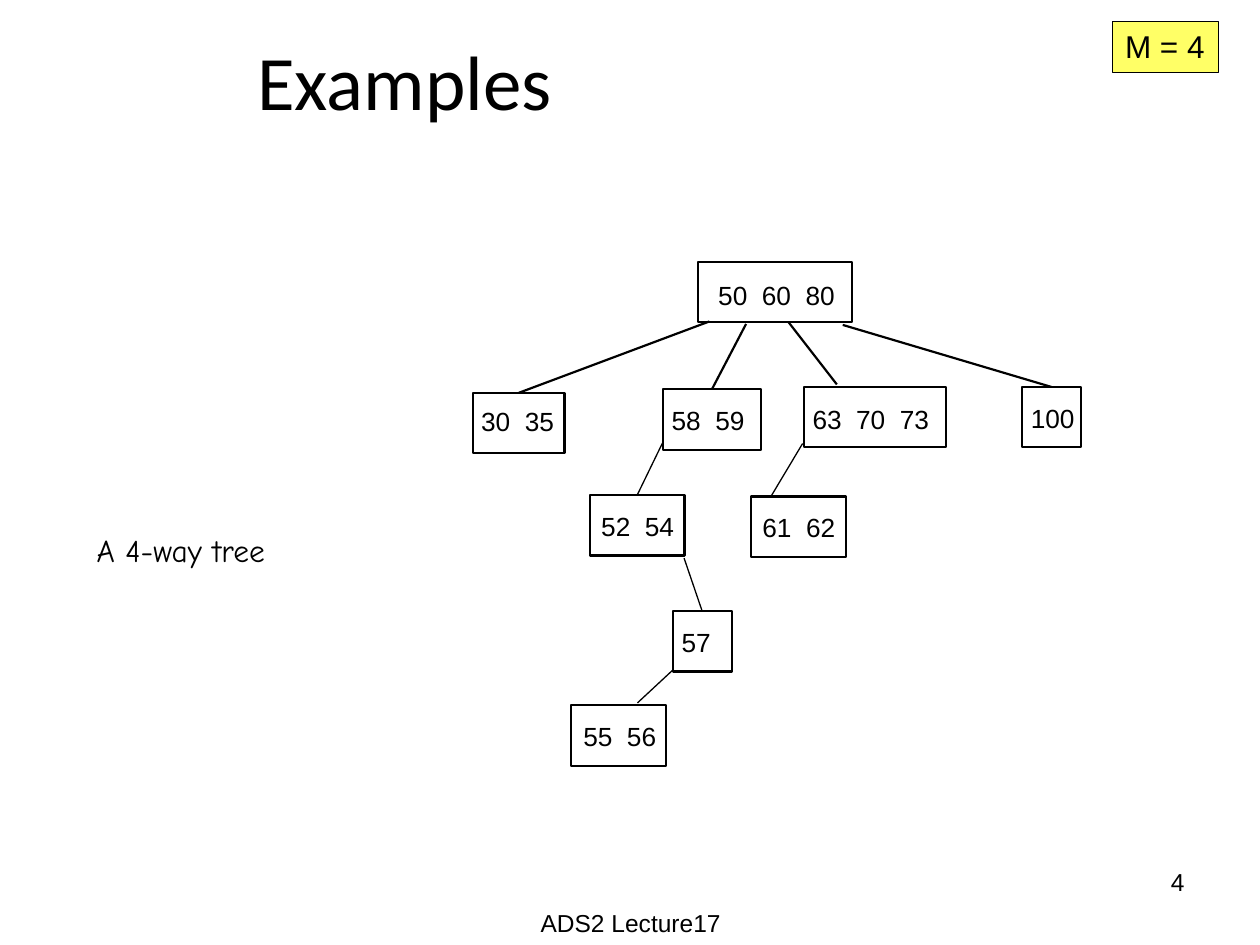
import pptx
import pptx.util
import pptx.dml.color
import pptx.enum.shapes
import pptx.enum.text
import pptx.oxml.ns
from lxml import etree

Cm = pptx.util.Cm
Pt = pptx.util.Pt
qn = pptx.oxml.ns.qn
RGB = pptx.dml.color.RGBColor.from_string
ALIGN = pptx.enum.text.PP_ALIGN
RECT = pptx.enum.shapes.MSO_SHAPE.RECTANGLE
STRAIGHT = pptx.enum.shapes.MSO_CONNECTOR.STRAIGHT
COLORS = {"ink": "000000", "node": "FFFFFF", "badge": "FFFF66"}
KEY_STEP = 0.88


def write(sp, text, font="Arial", size=14, align=ALIGN.LEFT, wrap=True,
          anchor=pptx.enum.text.MSO_ANCHOR.TOP, margin=None, tabs=0):
    tf = sp.text_frame
    tf.word_wrap = wrap
    tf.vertical_anchor = anchor
    if margin is not None:
        tf.margin_left = tf.margin_right = tf.margin_top = tf.margin_bottom = Cm(margin)
    p = tf.paragraphs[0]
    p.alignment = align
    if tabs:
        tab_list = etree.SubElement(p._p.get_or_add_pPr(), qn("a:tabLst"))
        for i in range(1, tabs + 1):
            etree.SubElement(tab_list, qn("a:tab"), pos=str(Cm(KEY_STEP * i)), algn="l")
    r = p.add_run()
    r.text = text
    r.font.name = font
    r.font.size = Pt(size)
    r.font.color.rgb = RGB(COLORS["ink"])


def add_box(shapes, x, y, w, h, fill, weight):
    sp = shapes.add_shape(RECT, Cm(x), Cm(y), Cm(w), Cm(h))
    sp.shadow.inherit = False
    sp.fill.solid()
    sp.fill.fore_color.rgb = RGB(COLORS[fill])
    sp.line.color.rgb = RGB(COLORS["ink"])
    sp.line.width = Pt(weight)
    return sp


prs = pptx.Presentation()
prs.slide_width, prs.slide_height = Cm(25.4), Cm(19.05)
s = prs.slides.add_slide(prs.slide_layouts[6])

labels = [
    ("4", 18.21, 17.35, 5.92, 1.32, {"align": ALIGN.RIGHT}),
    ("Examples", 0.56, 0.51, 15.19, 2.21,
     {"font": "Calibri", "size": 44, "align": ALIGN.CENTER,
      "anchor": pptx.enum.text.MSO_ANCHOR.MIDDLE}),
    ("A 4-way tree", 1.7, 10.59, 4.88, 1.02, {"font": "Comic Neue", "size": 18}),
    ("ADS2 Lecture17", 8.69, 18.19, 8.05, 0.86, {"align": ALIGN.CENTER}),
]
for text, x, y, w, h, style in labels:
    write(s.shapes.add_textbox(Cm(x), Cm(y), Cm(w), Cm(h)), text, **style)

tree = s.shapes.add_group_shape().shapes
nodes = [
    ((50, 60, 80), 14.07, 5.28, 3.1, 14.48, 5.64),
    ((30, 35), 9.53, 7.92, 1.85, 9.7, 8.18),
    ((58, 59), 13.36, 7.85, 1.98, 13.54, 8.15),
    ((63, 70, 73), 16.21, 7.8, 2.87, 16.38, 8.13),
    ((100,), 20.6, 7.8, 1.19, 20.78, 8.1),
    ((52, 54), 11.89, 9.98, 1.91, 12.12, 10.29),
    ((61, 62), 15.14, 10.01, 1.91, 15.37, 10.31),
    ((57,), 13.56, 12.32, 1.19, 13.74, 12.62),
    ((55, 56), 11.51, 14.22, 1.91, 11.76, 14.53),
]
boxes = {}
for keys, x, y, w, text_x, text_y in nodes:
    boxes[keys[0]] = add_box(tree, x, y, w, 1.22, "node", 1.25)
    sp = tree.add_textbox(Cm(text_x), Cm(text_y), Cm(KEY_STEP * len(keys) + 0.1), Cm(0.64))
    write(sp, "\t".join(map(str, keys)), size=15, margin=0, tabs=len(keys) - 1)

edges = [
    (14.3, 6.48, 30, None, 1.25),
    (15.04, 6.53, 58, None, 1.25),
    (15.9, 6.5, 63, (16.87, 7.75), 1.25),
    (16.99, 6.55, 100, None, 1.25),
    (13.36, 8.92, 52, None, 0.75),
    (16.18, 8.94, 61, (15.54, 10.01), 0.75),
    (13.79, 11.25, 57, None, 0.75),
    (13.56, 13.51, 55, (12.85, 14.17), 0.75),
]
for x, y, child, end, weight in edges:
    end_x, end_y = end or (x, y)
    line = tree.add_connector(STRAIGHT, Cm(x), Cm(y), Cm(end_x), Cm(end_y))
    if end is None:
        line.end_connect(boxes[child], 0)
    line.line.color.rgb = RGB(COLORS["ink"])
    line.line.width = Pt(weight)
    etree.SubElement(line._element.spPr, qn("a:effectLst"))

badge = add_box(s.shapes, 22.43, 0.43, 2.13, 1.04, "badge", 0.75)
write(badge, "M = 4", size=18, wrap=False)

prs.save("out.pptx")
